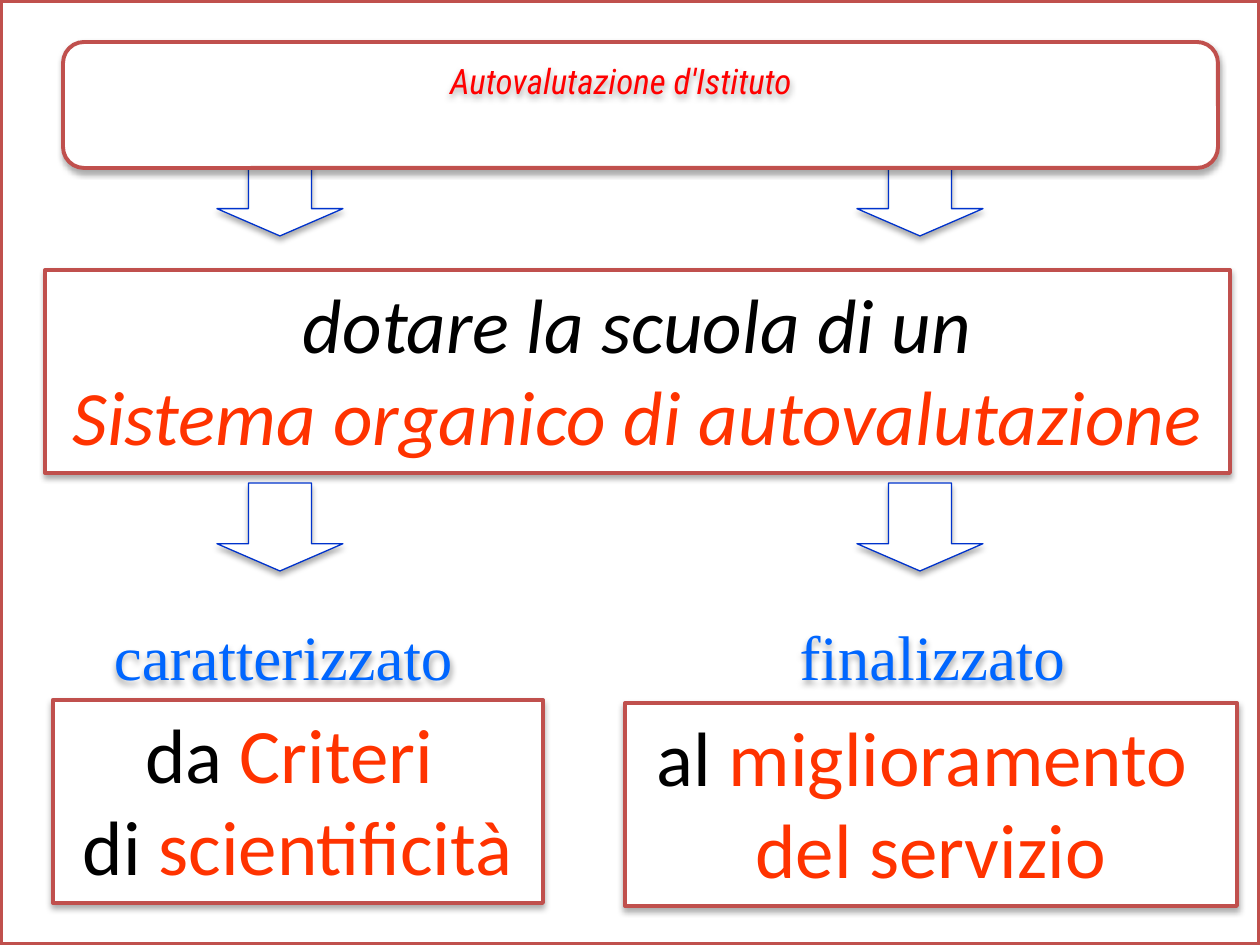
from dataclasses import dataclass
from typing import Optional

from lxml.etree import SubElement
from pptx import Presentation
from pptx.dml.color import RGBColor
from pptx.enum.shapes import MSO_SHAPE
from pptx.enum.text import MSO_ANCHOR, MSO_AUTO_SIZE, PP_ALIGN
from pptx.oxml.ns import qn
from pptx.util import Emu, Pt

PX = 914400 / 126


@dataclass(frozen=True)
class Theme:
    paper: str = "FFFFFF"
    ink: str = "000000"
    border: str = "C0504D"
    arrow: str = "0033CC"
    title: str = "FF0000"
    accent: str = "FF3300"
    label: str = "0066FF"
    title_font: str = "Roboto Condensed"
    body_font: str = "Calibri"
    label_font: str = "Times New Roman"
    title_size: int = 20
    label_size: int = 36
    body_size: int = 44


@dataclass(frozen=True)
class Area:
    left: int
    top: int
    width: int
    height: int

    def emu(self) -> list[Emu]:
        return [Emu(round(v * PX)) for v in (self.left, self.top, self.width, self.height)]


@dataclass(frozen=True)
class Span:
    text: str
    color: str


@dataclass(frozen=True)
class Panel:
    area: Area
    lines: list[list[Span]]
    italic: bool = False


@dataclass(frozen=True)
class Label:
    area: Area
    text: str


THEME = Theme()
FRAME = Area(0, 0, 1260, 945)
BANNER = Area(63, 42, 1155, 126)
TITLE = Area(49, 53, 1144, 94)
ARROW_LEFTS = (217, 857)
ARROW_TOPS = (148, 483)

GOAL = Panel(Area(45, 270, 1185, 203), [
    [Span("dotare la scuola di un", THEME.ink)],
    [Span("Sistema organico di autovalutazione", THEME.accent)],
], italic=True)
CRITERIA = Panel(Area(53, 700, 490, 203), [
    [Span("da", THEME.ink), Span(" Criteri ", THEME.accent)],
    [Span("di", THEME.ink), Span(" scientificità", THEME.accent)],
])
IMPROVEMENT = Panel(Area(625, 703, 612, 203), [
    [Span("al", THEME.ink), Span(" miglioramento ", THEME.accent)],
    [Span("del servizio", THEME.accent)],
])
LABELS = [
    Label(Area(116, 611, 335, 49), "caratterizzato"),
    Label(Area(765, 611, 335, 49), "finalizzato"),
]


def apply(target, values: dict) -> None:
    for name, value in values.items():
        setattr(target, name, value)


def add_shadow(shape) -> None:
    shape.shadow.inherit = False
    effects = shape._element.spPr.find(qn("a:effectLst"))
    outer = SubElement(effects, qn("a:outerShdw"), blurRad=str(Pt(3.5)),
                       dist=str(Pt(2.2)), dir="5400000", rotWithShape="0")
    color = SubElement(outer, qn("a:srgbClr"), val=THEME.ink)
    SubElement(color, qn("a:alpha"), val="32000")


def draw_shape(page, kind: MSO_SHAPE, area: Area, line: str, weight: float,
               fill: Optional[str] = THEME.paper):
    shape = page.shapes.add_shape(kind, *area.emu())
    if fill:
        shape.fill.solid()
        shape.fill.fore_color.rgb = RGBColor.from_string(fill)
        add_shadow(shape)
    else:
        shape.fill.background()
        shape.shadow.inherit = False
    shape.line.color.rgb = RGBColor.from_string(line)
    shape.line.width = Pt(weight)
    return shape


def write(shape, lines: list[list[Span]], font: str, size: int, italic: bool = False) -> None:
    frame = shape.text_frame
    apply(frame, {"word_wrap": False, "auto_size": MSO_AUTO_SIZE.NONE,
                  "vertical_anchor": MSO_ANCHOR.TOP})
    for index, line in enumerate(lines):
        para = frame.paragraphs[0] if index == 0 else frame.add_paragraph()
        para.alignment = PP_ALIGN.CENTER
        for span in line:
            run = para.add_run()
            run.text = span.text
            apply(run.font, {"name": font, "size": Pt(size), "italic": italic, "bold": False})
            run.font.color.rgb = RGBColor.from_string(span.color)


def draw_arrow(page, left: int, top: int) -> None:
    arrow = draw_shape(page, MSO_SHAPE.DOWN_ARROW, Area(left, top, 126, 88), THEME.arrow, 0.75)
    arrow.adjustments[0] = 0.5
    arrow.adjustments[1] = 0.31


def draw_panel(page, panel: Panel) -> None:
    box = draw_shape(page, MSO_SHAPE.RECTANGLE, panel.area, THEME.border, 2.25)
    write(box, panel.lines, THEME.body_font, THEME.body_size, panel.italic)


def draw_label(page, label: Label) -> None:
    box = page.shapes.add_textbox(*label.area.emu())
    write(box, [[Span(label.text, THEME.label)]], THEME.label_font, THEME.label_size)
    add_shadow(box)


def place_title(page) -> None:
    title = page.shapes.title
    apply(title, dict(zip(("left", "top", "width", "height"), TITLE.emu())))
    write(title, [[Span("Autovalutazione d'Istituto", THEME.title)]],
          THEME.title_font, THEME.title_size, italic=True)
    add_shadow(title)
    page.shapes._spTree.append(title._element)


def main() -> None:
    deck = Presentation()
    deck.slide_width, deck.slide_height = FRAME.emu()[2:]
    page = deck.slides.add_slide(deck.slide_layouts[5])
    for left in ARROW_LEFTS:
        draw_arrow(page, left, ARROW_TOPS[0])
    draw_shape(page, MSO_SHAPE.RECTANGLE, FRAME, THEME.border, 3, fill=None)
    draw_shape(page, MSO_SHAPE.ROUNDED_RECTANGLE, BANNER, THEME.border, 2.25)
    place_title(page)
    draw_panel(page, GOAL)
    for label, panel in zip(LABELS, (CRITERIA, IMPROVEMENT)):
        draw_label(page, label)
        draw_panel(page, panel)
    for left in ARROW_LEFTS:
        draw_arrow(page, left, ARROW_TOPS[1])
    deck.save("out.pptx")


if __name__ == "__main__":
    main()
